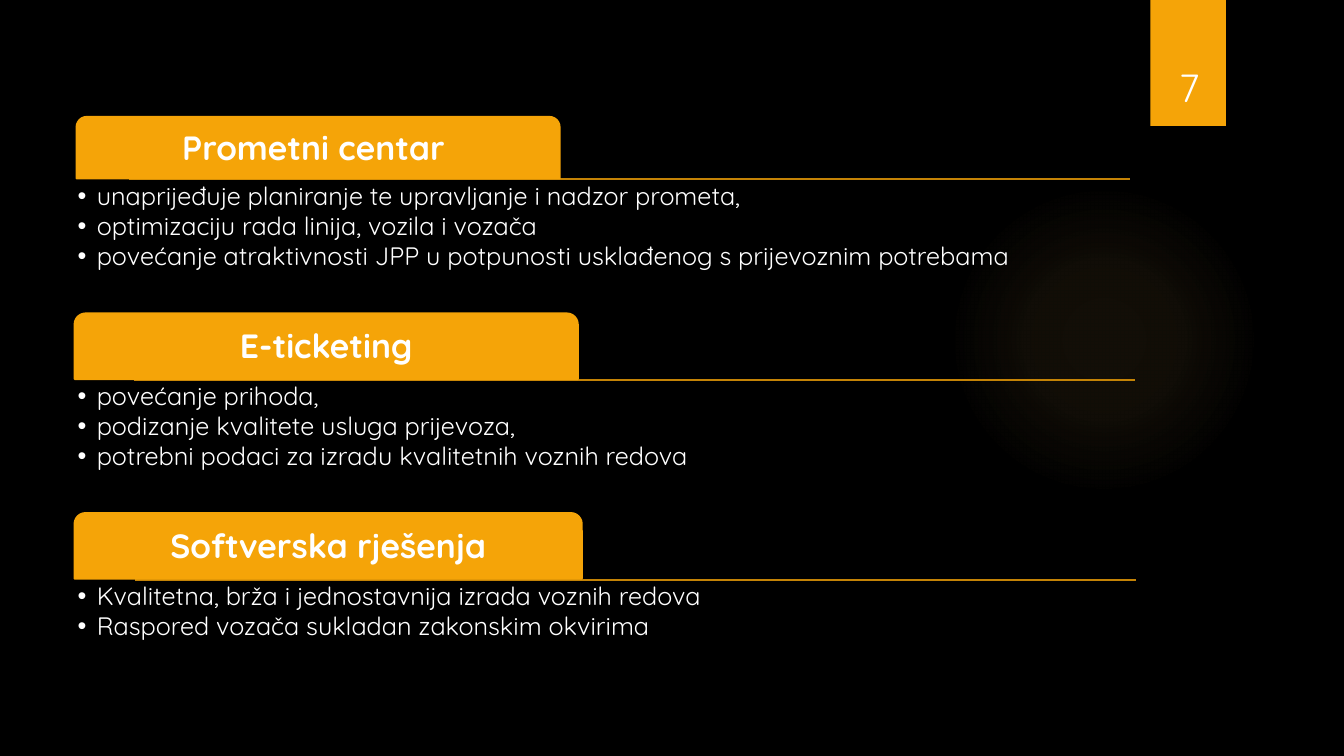
from dataclasses import dataclass

from lxml.etree import SubElement
from pptx import Presentation
from pptx.dml.color import RGBColor
from pptx.enum.shapes import MSO_CONNECTOR, MSO_SHAPE
from pptx.enum.text import MSO_ANCHOR, MSO_AUTO_SIZE, PP_ALIGN
from pptx.oxml import parse_xml
from pptx.oxml.ns import nsdecls, qn
from pptx.util import Inches, Pt

FONT = "Quicksand"
BLACK, WHITE = "000000", "FFFFFF"
ORANGE, DARK_ORANGE, GLOW = "F5A408", "C48306", "FAC96A"
RULE_LENGTH = 9.93


@dataclass
class Section:
    heading: str
    items: list[str]
    rule_left: float
    rule_top: float
    tab_left: float
    tab_width: float
    tab_height: float


SECTIONS = [
    Section("Prometni centar ", [
        "unaprijeđuje planiranje te upravljanje i nadzor prometa,",
        "optimizaciju rada linija, vozila i vozača",
        "povećanje atraktivnosti JPP u potpunosti usklađenog s prijevoznim potrebama",
    ], 1.28, 1.78, 0.76, 4.79, 0.61),
    Section("E-ticketing", [
        "povećanje prihoda,",
        "podizanje kvalitete usluga prijevoza,",
        "potrebni podaci za izradu kvalitetnih voznih redova",
    ], 1.33, 3.77, 0.74, 4.99, 0.65),
    Section("Softverska rješenja", [
        "Kvalitetna, brža i jednostavnija izrada voznih redova",
        "Raspored vozača sukladan zakonskim okvirima",
    ], 1.34, 5.75, 0.74, 5.03, 0.65),
]


def color(value: str) -> RGBColor:
    return RGBColor.from_string(value)


def place(shape, left: float, top: float, width: float, height: float) -> None:
    shape.left, shape.top = Inches(left), Inches(top)
    shape.width, shape.height = Inches(width), Inches(height)


def add_filled_shape(slide, kind, left: float, top: float, width: float, height: float):
    shape = slide.shapes.add_shape(kind, Inches(left), Inches(top), Inches(width), Inches(height))
    shape.shadow.inherit = False
    shape.fill.solid()
    shape.fill.fore_color.rgb = color(ORANGE)
    shape.line.fill.background()
    return shape


def set_frame(frame, anchor, inset: float) -> None:
    frame.word_wrap = True
    frame.auto_size = MSO_AUTO_SIZE.NONE
    frame.vertical_anchor = anchor
    frame.margin_left = frame.margin_right = Inches(inset)
    frame.margin_top = frame.margin_bottom = Inches(inset)


def set_font(paragraph, size: float, bold: bool = False) -> None:
    font = paragraph.font
    font.name, font.size, font.bold = FONT, Pt(size), bold
    font.color.rgb = color(WHITE)


def add_glow(slide) -> None:
    glow = add_filled_shape(slide, MSO_SHAPE.OVAL, 9.41, 1.83, 3.08, 3.08)
    stops = "".join(
        f'<a:gs pos="{position}000"><a:srgbClr val="{GLOW}"><a:alpha val="{alpha}000"/></a:srgbClr></a:gs>'
        for position, alpha in ((0, 7), (36, 6), (69, 0)))
    gradient = parse_xml(
        f'<a:gradFill {nsdecls("a")}><a:gsLst>{stops}</a:gsLst><a:path path="circle">'
        '<a:fillToRect l="50000" t="50000" r="50000" b="50000"/></a:path></a:gradFill>')
    properties = glow.element.spPr
    properties.replace(properties.find(qn("a:solidFill")), gradient)


def add_page_number(slide, number: str) -> None:
    add_filled_shape(slide, MSO_SHAPE.RECTANGLE, 11.41, 0, 0.75, 1.25)
    box = slide.shapes.add_textbox(Inches(11.42), Inches(0.74), Inches(0.75), Inches(0.4))
    set_frame(box.text_frame, MSO_ANCHOR.BOTTOM, 0.05)
    paragraph = box.text_frame.paragraphs[0]
    paragraph.text = number
    paragraph.alignment = PP_ALIGN.CENTER
    set_font(paragraph, 28)


def add_rule(slide, section: Section) -> None:
    top = Inches(section.rule_top)
    rule = slide.shapes.add_connector(
        MSO_CONNECTOR.STRAIGHT, Inches(section.rule_left), top,
        Inches(section.rule_left + RULE_LENGTH), top)
    rule.line.color.rgb = color(DARK_ORANGE)
    rule.line.width = Pt(1.5)
    SubElement(rule.element.spPr, qn("a:effectLst"))


def add_tab(slide, section: Section, heading) -> None:
    left, width, height = section.tab_left, section.tab_width, section.tab_height
    top = section.rule_top - height - 0.01
    tab = add_filled_shape(slide, MSO_SHAPE.ROUND_2_SAME_RECTANGLE, left, top, width, height)
    tab.line.color.rgb = color(ORANGE)
    tab.line.width = Pt(1.5)

    # Heading text lies in front of the tab
    tab.element.addnext(heading.element)
    place(heading, left + 0.03, top + 0.03, width - 0.06, height - 0.03)
    set_frame(heading.text_frame, MSO_ANCHOR.MIDDLE, 0.05)
    paragraph = heading.text_frame.paragraphs[0]
    paragraph.text = section.heading
    paragraph.alignment = PP_ALIGN.CENTER
    paragraph.line_spacing = 0.9
    set_font(paragraph, 24, bold=True)


def fill_list(body, section: Section) -> None:
    place(body, 0.73, section.rule_top, 9.93, 1.3)
    frame = body.text_frame
    set_frame(frame, MSO_ANCHOR.TOP, 0.04)
    frame.text = "\n".join(section.items)
    for paragraph in frame.paragraphs:
        paragraph.level = 1
        properties = paragraph._p.get_or_add_pPr()
        properties.set("marL", str(Inches(0.19)))
        properties.set("indent", str(Inches(-0.19)))
        SubElement(properties, qn("a:buFont"), typeface="Arial")
        SubElement(properties, qn("a:buChar"), char="•")
        paragraph.alignment = PP_ALIGN.LEFT
        paragraph.line_spacing = 0.9
        paragraph.space_before = Pt(0)
        paragraph.space_after = Pt(2)
        set_font(paragraph, 18)


def main() -> None:
    presentation = Presentation()
    presentation.slide_width, presentation.slide_height = Inches(13.33), Inches(7.5)

    # The comparison layout has a title and four text bodies
    slide = presentation.slides.add_slide(presentation.slide_layouts[4])
    slide.background.fill.solid()
    slide.background.fill.fore_color.rgb = color(BLACK)
    title, *bodies, spare = list(slide.placeholders)
    spare.element.getparent().remove(spare.element)

    # Decoration
    add_glow(slide)
    add_page_number(slide, "7")
    for section in reversed(SECTIONS):
        add_rule(slide, section)

    # Sections: the first heading is the slide title
    for section, body in zip(SECTIONS, bodies):
        is_first = section is SECTIONS[0]
        heading = title if is_first else slide.shapes.add_textbox(0, 0, 0, 0)
        add_tab(slide, section, heading)
        heading.element.addnext(body.element)
        fill_list(body, section)

    presentation.save("out.pptx")


if __name__ == "__main__":
    main()
